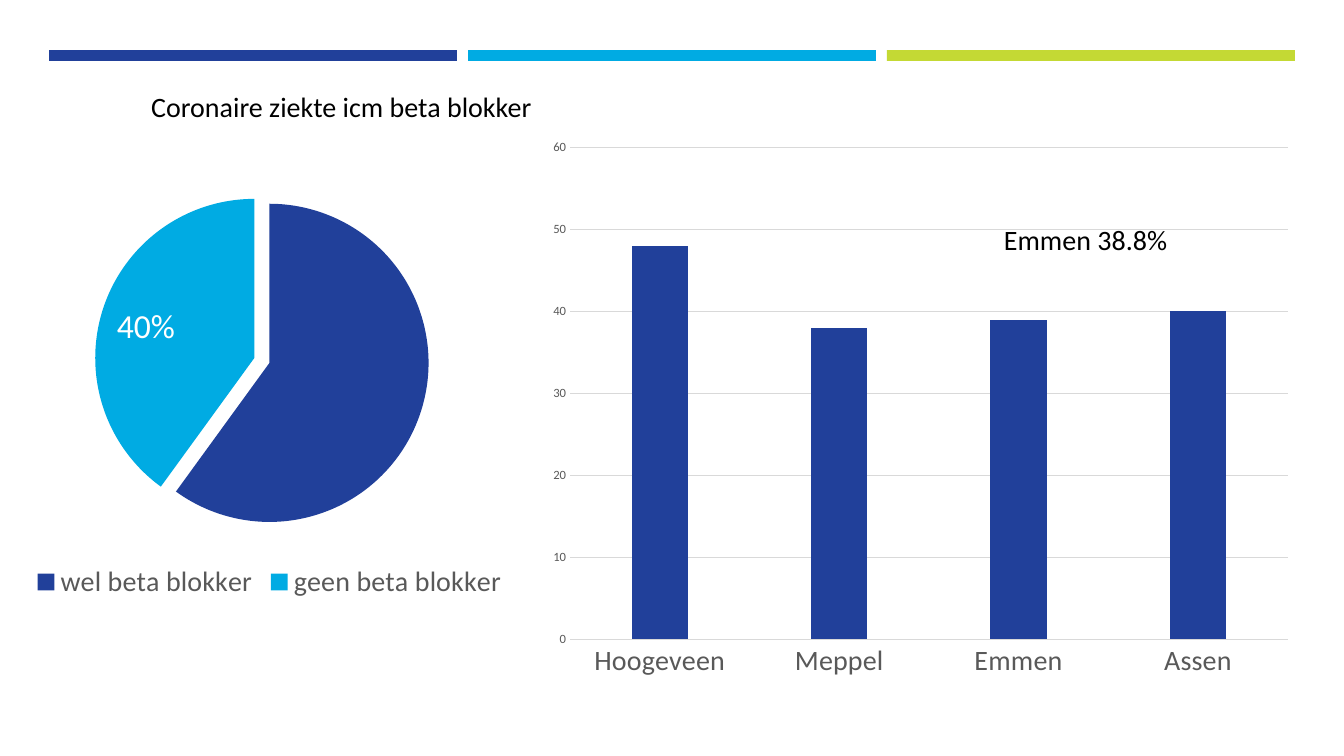
import pptx
import pptx.chart.data
import pptx.dml.color
import pptx.enum.chart
import pptx.enum.shapes
import pptx.enum.text
import pptx.oxml
import pptx.util
from pptx.oxml import ns

PX = 9525 * 96 / 100.8  # EMU in one px
NAVY, CYAN, LIME = "21409A", "00ABE3", "C4D934"
BLACK, WHITE, GREY, GRID = "000000", "FFFFFF", "595959", "D9D9D9"


def box(*lengths):
    """Turn px lengths into EMU."""
    return [pptx.util.Emu(round(length * PX)) for length in lengths]


def style(font, size, color):
    font.name = "Calibri"
    font.size = pptx.util.Pt(size)
    font.bold = False
    font.color.rgb = pptx.dml.color.RGBColor.from_string(color)


presentation = pptx.Presentation()
presentation.slide_width, presentation.slide_height = box(1344, 756)
slide = presentation.slides.add_slide(presentation.slide_layouts[5])
shapes = slide.shapes

# Bands along the top
for index, color in enumerate([NAVY, CYAN, LIME]):
    band = shapes.add_shape(pptx.enum.shapes.MSO_SHAPE.RECTANGLE, *box(49 + 419 * index, 50, 408, 11))
    band.shadow.inherit = False
    band.fill.solid()
    band.fill.fore_color.rgb = pptx.dml.color.RGBColor.from_string(color)
    band.line.fill.background()

# Share of patients with and without beta blocker
pie_data = pptx.chart.data.CategoryChartData()
pie_data.categories = ["wel beta blokker", "geen beta blokker"]
pie_data.add_series("Series 1", [60, 40])
pie = shapes.add_chart(pptx.enum.chart.XL_CHART_TYPE.PIE, *box(0, 174, 539, 431), pie_data).chart
pie.has_title = False
style(pie.font, 10, BLACK)
pie.has_legend = True
pie.legend.position = pptx.enum.chart.XL_LEGEND_POSITION.BOTTOM
pie.legend.include_in_layout = False
style(pie.legend.font, 20, GREY)
for index, color in enumerate([NAVY, CYAN]):
    fill = pie.plots[0].series[0].points[index].format.fill
    fill.solid()
    fill.fore_color.rgb = pptx.dml.color.RGBColor.from_string(color)
# Pull the second slice out by 10%
second_slice = list(pie.element.iter(ns.qn("c:dPt")))[1]
explosion = pptx.oxml.parse_xml(f'<c:explosion {ns.nsdecls("c")} val="10"/>')
second_slice.find(ns.qn("c:spPr")).addprevious(explosion)

# Percentage per city
city_data = pptx.chart.data.CategoryChartData()
city_data.categories = ["Hoogeveen", "Meppel", "Emmen", "Assen"]
city_data.add_series("Series 1", [48, 38, 39, 40])
columns = shapes.add_chart(
    pptx.enum.chart.XL_CHART_TYPE.COLUMN_CLUSTERED, *box(538, 129, 765, 560), city_data
).chart
columns.has_title = False
columns.has_legend = False
style(columns.font, 10, BLACK)
plot = columns.plots[0]
plot.gap_width = 219
plot.overlap = -27
plot.vary_by_categories = False
fill = plot.series[0].format.fill
fill.solid()
fill.fore_color.rgb = pptx.dml.color.RGBColor.from_string(NAVY)

value_axis, category_axis = columns.value_axis, columns.category_axis
value_axis.minimum_scale, value_axis.maximum_scale, value_axis.major_unit = 0, 60, 10
value_axis.format.line.fill.background()
for axis, size in [(value_axis, 9), (category_axis, 20)]:
    axis.major_tick_mark = pptx.enum.chart.XL_TICK_MARK.NONE
    style(axis.tick_labels.font, size, GREY)
for line in [value_axis.major_gridlines.format.line, category_axis.format.line]:
    line.color.rgb = pptx.dml.color.RGBColor.from_string(GRID)
    line.width = pptx.util.Pt(0.75)

# Title and labels over the charts
slice_label = shapes.add_textbox(*box(107, 300, 135, 50))
city_label = shapes.add_textbox(*box(994, 218, 238, 44))
title = shapes.title
title.left, title.top, title.width, title.height = box(141, 84, 1044, 44)
for shape, text, size, color in [
    (title, "Coronaire ziekte icm beta blokker", 20, BLACK),
    (slice_label, "40%", 24, WHITE),
    (city_label, "Emmen 38.8%", 20, BLACK),
]:
    frame = shape.text_frame
    frame.text = text
    frame.word_wrap = True
    frame.vertical_anchor = pptx.enum.text.MSO_ANCHOR.TOP
    frame.auto_size = pptx.enum.text.MSO_AUTO_SIZE.SHAPE_TO_FIT_TEXT
    paragraph = frame.paragraphs[0]
    paragraph.alignment = pptx.enum.text.PP_ALIGN.LEFT
    style(paragraph.font, size, color)

presentation.save("out.pptx")
